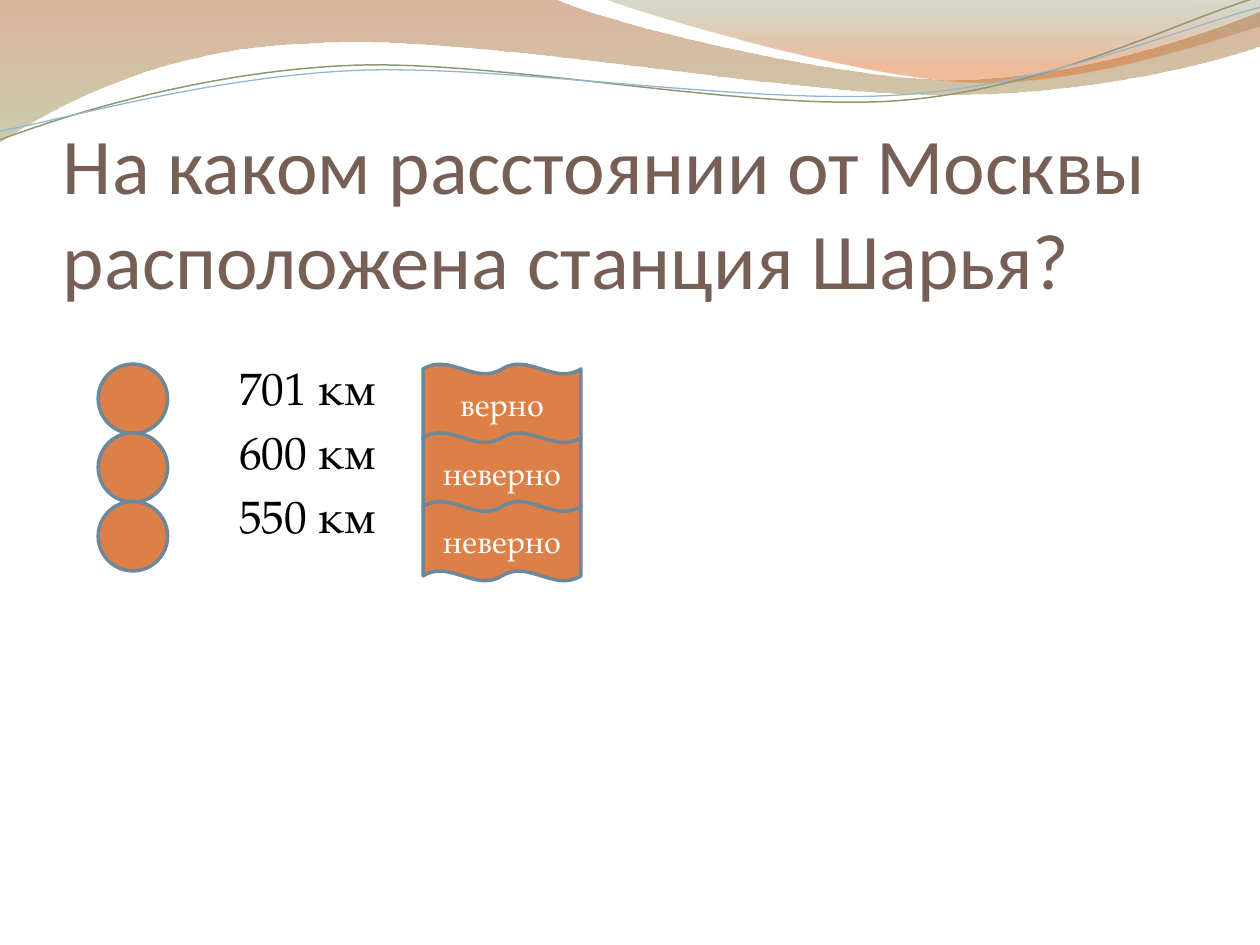
from pptx import Presentation
from pptx.dml.color import RGBColor
from pptx.enum import shapes, text
from pptx.oxml import ns
from pptx.util import Cm, Pt
from lxml import etree

COLORS = {
    "title": "775F55", "body": "000000", "label": "FFFFFF",
    "fill": "DD8047", "outline": "6D879B",
    "rust": "AF5C29", "green": "9DA66B", "olive": "7D835B", "orange": "DD6B24",
    "line_olive": "929772", "line_blue": "94B6D2",
}
SERIF = "TeX Gyre Pagella"

LEFT_WAVE = [
    (0, 0), (11.18, -0.03),
    (12.09, 0.43, 16.87, 1.6, 19.25, 1.6), (21.67, 1.6, 24.33, 0.66, 25.4, 0.23),
    (25.43, 0.91),
    (24.97, 1.12, 22.1, 1.93, 18.95, 1.91), (15.8, 1.91, 9.7, 0.71, 6.53, 0.86),
    (3.28, 0.91, 1.17, 2.11, -0.03, 2.87),
]
RIGHT_WAVE = [
    (12.17, -0.03), (12.93, 0.28, 17.32, 1.57, 19.53, 1.65),
    (21.74, 1.75, 24.41, 0.81, 25.4, 0.53), (25.4, 0),
]
OLIVE_LINE = [
    (0, 2.82), (1.22, 2.36, 4.01, 1.45, 7.04, 1.32),
    (10.03, 1.19, 15.06, 2.26, 18.11, 2.03), (21.16, 1.8, 23.83, 0.38, 25.35, -0.05),
]
BLUE_LINE = [
    (0, 2.64), (1.19, 2.44, 4.17, 1.55, 7.19, 1.42),
    (10.24, 1.3, 15.16, 2.13, 18.21, 1.91), (21.23, 1.7, 23.9, 0.53, 25.4, 0.15),
]
ANSWERS = [("701 км", "верно"), ("600 км", "неверно"), ("550 км", "неверно")]


def rgb(name):
    """Return the named colour."""
    return RGBColor.from_string(COLORS[name])


def set_font(p, name, size, color):
    """Set the font of a whole paragraph."""
    p.font.name, p.font.size = name, Pt(size)
    p.font.color.rgb = rgb(color)


def add_outline(s, left, top, segments, close):
    """Draw an outline of straight and cubic segments relative to a corner."""
    points = [(left + Cm(seg[-2]), top + Cm(seg[-1])) for seg in segments]
    builder = s.shapes.build_freeform(*points[0])
    builder.add_line_segments(points[1:], close=close)
    sp = builder.convert_to_shape()
    sp.shadow.inherit = False
    lines = list(sp._element.spPr.iter(ns.qn("a:lnTo")))
    for line, seg in zip(lines, segments[1:]):
        if len(seg) == 6:
            curve = etree.Element(ns.qn("a:cubicBezTo"))
            for x, y in zip(seg[::2], seg[1::2]):
                pt = etree.SubElement(curve, ns.qn("a:pt"))
                pt.set("x", str(left + Cm(x) - sp.left))
                pt.set("y", str(top + Cm(y) - sp.top))
            line.getparent().replace(line, curve)
    return sp


def add_header(s, left, top):
    """Draw the waves and thin lines along the top edge."""
    waves = [
        (LEFT_WAVE, [(0, "rust", 45), (1, "green", 55)]),
        (RIGHT_WAVE, [(0, "olive", 30), (0.8, "orange", 45)]),
    ]
    for segments, stops in waves:
        sp = add_outline(s, left, top, segments, True)
        sp.line.fill.background()
        sp.fill.gradient()
        sp.fill.gradient_angle = 270
        for stop, (position, color, _) in zip(sp.fill.gradient_stops, stops):
            stop.position = position
            stop.color.rgb = rgb(color)
        for clr, (_, _, opacity) in zip(sp._element.spPr.iter(ns.qn("a:srgbClr")), stops):
            etree.SubElement(clr, ns.qn("a:alpha")).set("val", str(opacity * 1000))
    for segments, color, width in [(OLIVE_LINE, "line_olive", 0.85), (BLUE_LINE, "line_blue", 0.75)]:
        sp = add_outline(s, left, top, segments, False)
        sp.fill.background()
        sp.line.color.rgb = rgb(color)
        sp.line.width = Pt(width)


def add_title(s, left, top, width, height):
    """Write the question at the bottom of its box."""
    tf = s.shapes.add_textbox(left, top, width, height).text_frame
    tf.word_wrap = True
    tf.vertical_anchor = text.MSO_ANCHOR.BOTTOM
    tf.margin_left = tf.margin_right = tf.margin_bottom = 0
    p = tf.paragraphs[0]
    p.text = "На каком расстоянии от Москвы расположена станция Шарья?"
    set_font(p, "Calibri", 45, "title")


def add_badge(s, kind, left, top, width, height):
    """Add an orange outlined shape."""
    sp = s.shapes.add_shape(kind, left, top, width, height)
    sp.shadow.inherit = False
    sp.fill.solid()
    sp.fill.fore_color.rgb = rgb("fill")
    sp.line.color.rgb = rgb("outline")
    sp.line.width = Pt(2)
    return sp


def add_answers(s, left, top, width, height):
    """List the answers between a column of circles and one of verdicts."""
    tf = s.shapes.add_textbox(left, top, width, height).text_frame
    tf.word_wrap = True
    for i, (answer, _) in enumerate(ANSWERS):
        p = tf.add_paragraph() if i else tf.paragraphs[0]
        p.text = answer
        p._p.get_or_add_pPr().set("marL", str(Cm(3.3)))
        p.space_before = Pt(5.2 if i else 0)
        set_font(p, SERIF, 26, "body")
    tops = [top + Cm(0.2) + i * Cm(2.77) // 2 for i in range(len(ANSWERS))]
    for y in tops:
        add_badge(s, shapes.MSO_SHAPE.OVAL, left + Cm(0.71), y, Cm(1.4), Cm(1.4))
    for y, (_, verdict) in zip(tops, ANSWERS):
        sp = add_badge(s, shapes.MSO_SHAPE.DOUBLE_WAVE, left + Cm(7.26), y, Cm(3.18), Cm(1.6))
        tf = sp.text_frame
        tf.vertical_anchor = text.MSO_ANCHOR.MIDDLE
        p = tf.paragraphs[0]
        p.text = verdict
        p.alignment = text.PP_ALIGN.CENTER
        set_font(p, SERIF, 18, "label")


def main():
    """Build and save the slide."""
    prs = Presentation()
    prs.slide_width, prs.slide_height = Cm(25.4), Cm(19.05)
    s = prs.slides.add_slide(prs.slide_layouts[6])
    add_header(s, 0, 0)
    add_title(s, Cm(1.27), Cm(1.96), Cm(22.86), Cm(4.19))
    add_answers(s, Cm(1.27), Cm(7.14), Cm(22.86), Cm(10.41))
    prs.save("out.pptx")


if __name__ == "__main__":
    main()
